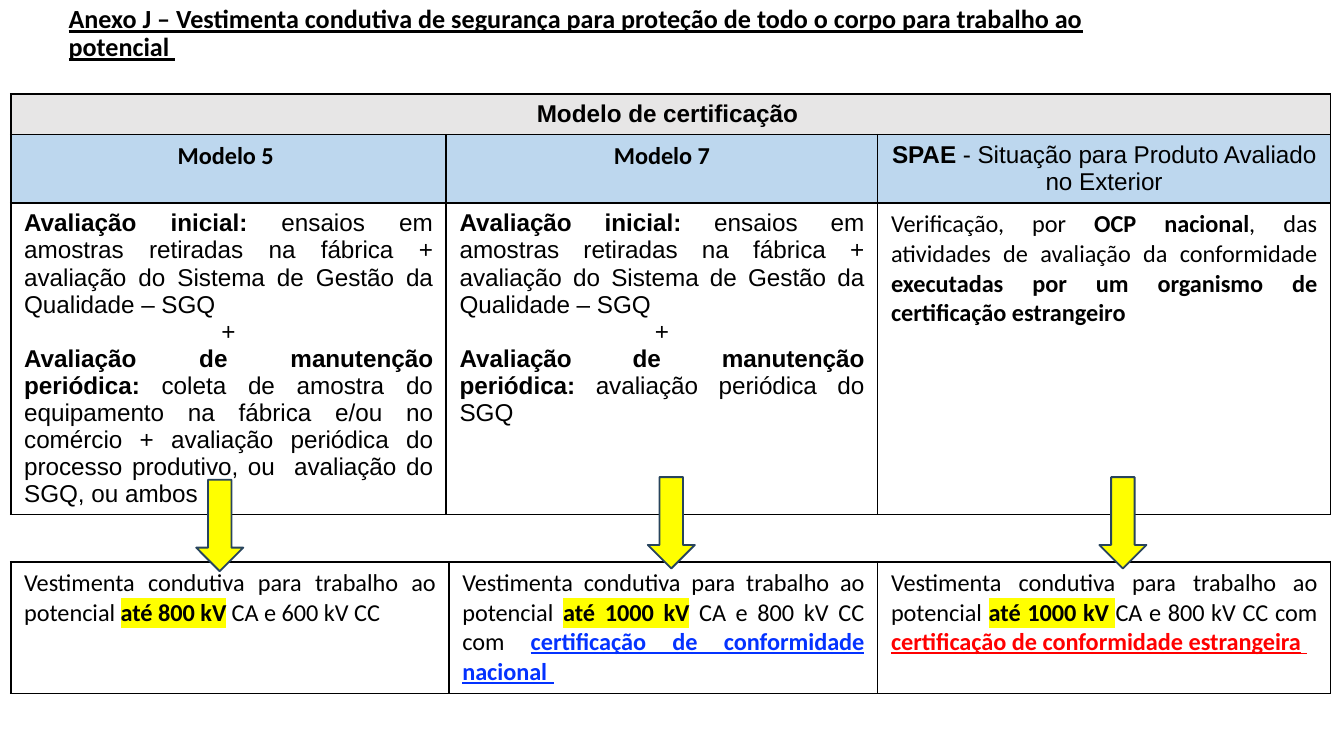
from lxml import etree
from pptx import Presentation
from pptx.dml.color import RGBColor
from pptx.enum.shapes import MSO_SHAPE
from pptx.enum.text import MSO_ANCHOR, PP_ALIGN
from pptx.oxml.ns import qn
from pptx.util import Inches, Pt

DOWN_ARROW = MSO_SHAPE.DOWN_ARROW
MIDDLE = MSO_ANCHOR.MIDDLE
LEFT, CENTER, JUSTIFY = PP_ALIGN.LEFT, PP_ALIGN.CENTER, PP_ALIGN.JUSTIFY

BLACK, WHITE, YELLOW = "000000", "FFFFFF", "FFFF00"
GRAY, LIGHT_BLUE, OUTLINE = "E7E6E6", "BDD7EE", "28445D"
ARIAL = {"font": "Arial"}
BOLD_ARIAL = {"font": "Arial", "bold": True}
BOLD = {"bold": True}
PLAIN = {}
MARKED = {"bold": True, "highlight": YELLOW}


def color(value):
    return RGBColor.from_string(value)


class Page:
    text_font = "Calibri"
    text_size = 13

    def __init__(self, deck):
        self.slide = deck.slides.add_slide(deck.slide_layouts[5])

    def span(self, para, text, font=None, size=None, bold=False,
             underline=False, ink=BLACK, highlight=None):
        run = para.add_run()
        run.text = text
        run.font.size = Pt(size or self.text_size)
        run.font.bold = bold
        run.font.underline = underline
        run.font.color.rgb = color(ink)
        run.font.name = font or self.text_font
        if highlight:
            mark = etree.Element(qn("a:highlight"))
            etree.SubElement(mark, qn("a:srgbClr"), val=highlight)
            run.font.fill._xPr.find(qn("a:latin")).addprevious(mark)

    def paragraphs(self, frame, content):
        for index, (align, spans) in enumerate(content):
            para = frame.paragraphs[0] if index == 0 else frame.add_paragraph()
            para.alignment = align
            for text, style in spans:
                self.span(para, text, **style)

    def title(self, left, top, width, height, spans):
        box = self.slide.shapes.title
        box.left, box.top = Inches(left), Inches(top)
        box.width, box.height = Inches(width), Inches(height)
        frame = box.text_frame
        frame.word_wrap = True
        frame.vertical_anchor = MIDDLE
        self.paragraphs(frame, [(LEFT, spans)])
        frame.paragraphs[0].line_spacing = 0.9

    def borders(self, cell):
        properties = cell._tc.get_or_add_tcPr()
        for index, side in enumerate(("a:lnL", "a:lnR", "a:lnT", "a:lnB")):
            line = etree.Element(qn(side), w=str(Pt(1)))
            fill = etree.SubElement(line, qn("a:solidFill"))
            etree.SubElement(fill, qn("a:srgbClr"), val=BLACK)
            properties.insert(index, line)

    def table(self, left, top, widths, heights, rows, fills):
        table = self.slide.shapes.add_table(
            len(rows), len(widths), Inches(left), Inches(top),
            Inches(sum(widths)), Inches(sum(heights))).table
        table.first_row = table.horz_banding = False
        for column, width in zip(table.columns, widths):
            column.width = Inches(width)
        for r, (height, contents, fill) in enumerate(zip(heights, rows, fills)):
            table.rows[r].height = Inches(height)
            for c in range(len(widths)):
                cell = table.cell(r, c)
                cell.fill.solid()
                cell.fill.fore_color.rgb = color(fill)
                self.borders(cell)
                if c < len(contents):
                    self.paragraphs(cell.text_frame, contents[c])
            if len(contents) == 1:
                table.cell(r, 0).merge(table.cell(r, len(widths) - 1))

    def arrow(self, left, top, width, height):
        shape = self.slide.shapes.add_shape(
            DOWN_ARROW, Inches(left), Inches(top), Inches(width), Inches(height))
        shape.shadow.inherit = False
        shape.fill.solid()
        shape.fill.fore_color.rgb = color(YELLOW)
        shape.line.color.rgb = color(OUTLINE)
        shape.line.width = Pt(1)


def evaluation(maintenance):
    return [
        (JUSTIFY, [("Avaliação inicial: ", BOLD_ARIAL),
                   ("ensaios em amostras retiradas na fábrica + avaliação do "
                    "Sistema de Gestão da Qualidade – SGQ", ARIAL)]),
        (CENTER, [("+", ARIAL)]),
        (JUSTIFY, [("Avaliação de manutenção periódica:", BOLD_ARIAL),
                   (maintenance, ARIAL)]),
    ]


def garment(limit, *ending):
    return [(JUSTIFY, [("Vestimenta condutiva para trabalho ao potencial ", PLAIN),
                       (limit, MARKED), *ending])]


def certification(text, ink):
    strong = {"bold": True, "underline": True, "ink": ink}
    return [("CA e 800 kV CC com ", PLAIN), (text, strong),
            (" ", {**strong, "font": "Arial"})]


def main():
    deck = Presentation()
    deck.slide_width = Inches(10)
    deck.slide_height = deck.slide_width * 9 // 16
    page = Page(deck)

    header = [[(CENTER, [("Modelo de certificação ", BOLD_ARIAL)])]]
    models = [
        [(CENTER, [("Modelo 5 ", BOLD)])],
        [(CENTER, [("Modelo 7", BOLD)])],
        [(CENTER, [("SPAE", BOLD_ARIAL),
                   (" - Situação para Produto Avaliado no Exterior", ARIAL)])],
    ]
    steps = [
        evaluation(" coleta de amostra do equipamento na fábrica e/ou no comércio + "
                   "avaliação periódica do processo produtivo, ou  avaliação do SGQ, "
                   "ou ambos"),
        evaluation(" avaliação periódica do SGQ"),
        [(JUSTIFY, [("Verificação, por ", PLAIN), ("OCP nacional", BOLD),
                    (", das atividades de avaliação da conformidade ", PLAIN),
                    ("executadas por um organismo de certificação estrangeiro", BOLD),
                    (" ", {**BOLD_ARIAL, "size": 12})])],
    ]
    page.table(0.08, 0.7, [3.24, 3.21, 3.37], [0.3, 0.51, 2.31],
               [header, models, steps], [GRAY, LIGHT_BLUE, WHITE])

    heading = {"size": 14, "underline": True}
    page.title(0.41, -0.1, 8.43, 0.71, [
        ("Anexo J – Vestimenta condutiva de segurança para proteção de todo o corpo "
         "para trabalho ao potencial", {**heading, "bold": True}),
        (" ", heading)])

    garments = [
        garment("até 800 kV", (" CA e 600 kV CC ", PLAIN)),
        garment("até 1000 kV", (" ", BOLD),
                *certification("certificação de conformidade nacional", "0432FF")),
        garment("até 1000 kV ",
                *certification("certificação de conformidade estrangeira", "FF0000")),
    ]
    page.table(0.08, 4.18, [3.26, 3.19, 3.37], [0.97], [garments], [WHITE])

    for left, top in ((1.46, 3.57), (4.82, 3.55), (8.18, 3.55)):
        page.arrow(left, top, 0.35, 0.68)

    deck.save("out.pptx")


if __name__ == "__main__":
    main()
